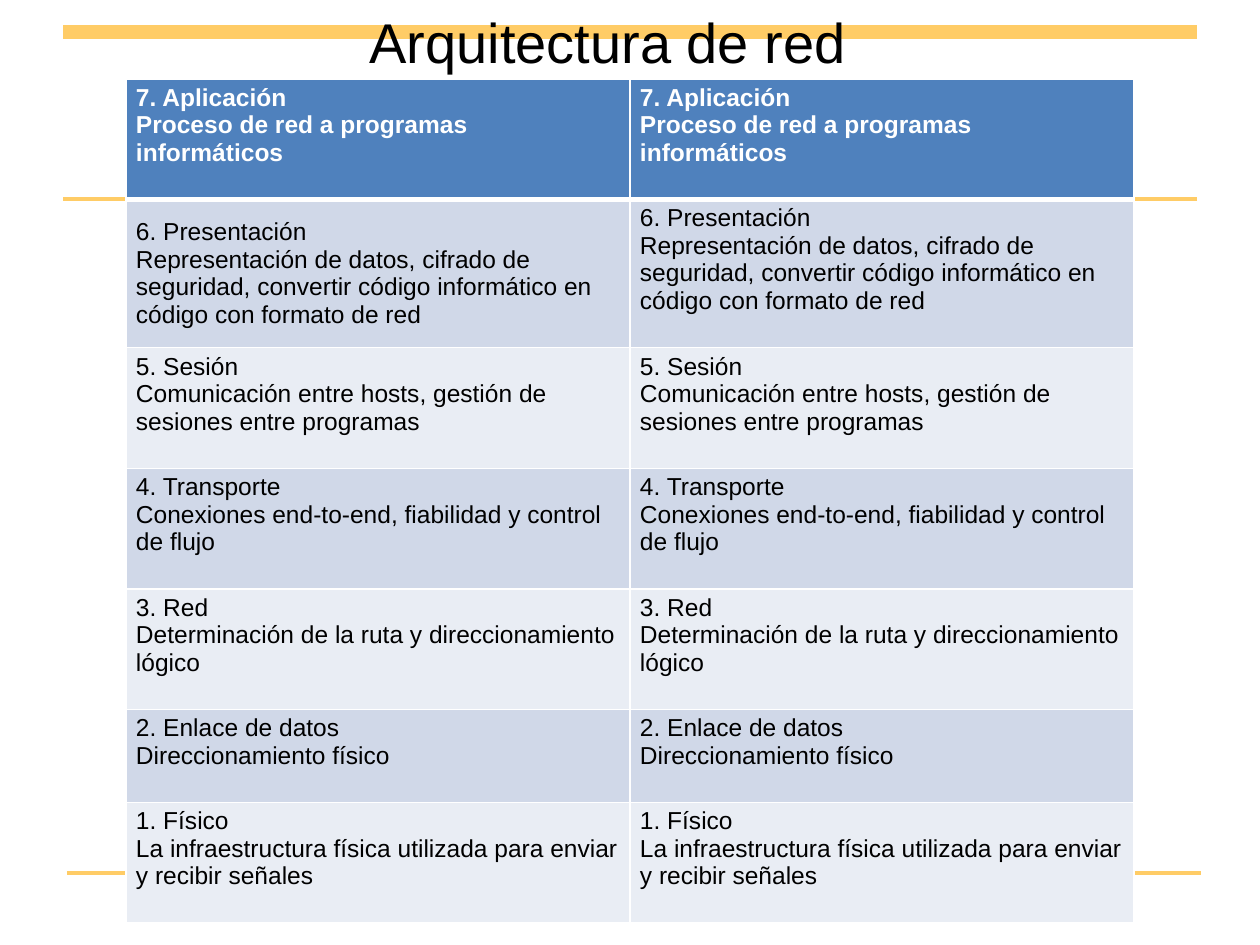
from lxml import etree
from pptx import Presentation
from pptx.dml.color import RGBColor
from pptx.enum.shapes import MSO_CONNECTOR
from pptx.enum.text import MSO_ANCHOR, MSO_AUTO_SIZE
from pptx.oxml.ns import qn
from pptx.util import Pt

STRAIGHT = MSO_CONNECTOR.STRAIGHT
MIDDLE = MSO_ANCHOR.MIDDLE
FIT_SHAPE = MSO_AUTO_SIZE.SHAPE_TO_FIT_TEXT

PX = 914400 / 126
COLORS = {"rule": "FFCC66", "header": "4F81BD", "band_dark": "D0D8E8",
          "band_light": "E9EDF4", "white": "FFFFFF", "black": "000000"}

# Rules: left, top, width in px and weight in pt
RULES = [(63, 32, 1134, 8), (67, 873, 1134, 2), (63, 199, 1134, 2)]

# Layers: heading, description, row height in px
LAYERS = [
    ("7. Aplicación", "Proceso de red a programas informáticos", 120),
    ("6. Presentación", "Representación de datos, cifrado de seguridad, convertir "
     "código informático en código con formato de red", 147),
    ("5. Sesión", "Comunicación entre hosts, gestión de sesiones entre programas", 120),
    ("4. Transporte", "Conexiones end-to-end, fiabilidad y control de flujo", 120),
    ("3. Red", "Determinación de la ruta y direccionamiento lógico", 120),
    ("2. Enlace de datos", "Direccionamiento físico", 92),
    ("1. Físico", "La infraestructura física utilizada para enviar y recibir señales", 120),
]


def px(n):
    return round(n * PX)


def rgb(name):
    return RGBColor.from_string(COLORS[name])


def style_font(r, size, color, bold=False):
    formats = {"name": "Arial", "size": Pt(size), "bold": bold}
    for key, value in formats.items():
        setattr(r.font, key, value)
    r.font.color.rgb = rgb(color)


def add_rule(s, left, top, width, weight):
    line = s.shapes.add_connector(STRAIGHT, px(left), px(top), px(left + width), px(top))
    line.line.color.rgb = rgb("rule")
    line.line.width = Pt(weight)
    etree.SubElement(line._element.spPr, qn("a:effectLst"))


def set_borders(cell, widths):
    tcPr = cell._tc.get_or_add_tcPr()
    for i, (side, width) in enumerate(widths.items()):
        ln = etree.Element(qn(f"a:ln{side}"), w=str(Pt(width)))
        fill = etree.SubElement(ln, qn("a:solidFill"))
        etree.SubElement(fill, qn("a:srgbClr"), val=COLORS["white"])
        tcPr.insert(i, ln)


def fill_cell(cell, row, col, heading, description):
    header = row == 0
    band = "header" if header else "band_dark" if row % 2 else "band_light"
    cell.fill.solid()
    cell.fill.fore_color.rgb = rgb(band)
    # One free line below the text, except in the left Presentación cell
    free_line = 0 if (row, col) == (1, 0) else 28
    formats = {"vertical_anchor": MIDDLE, "margin_left": px(10), "margin_right": px(10),
               "margin_top": px(5), "margin_bottom": px(5 + free_line)}
    for key, value in formats.items():
        setattr(cell, key, value)
    set_borders(cell, {"L": 1, "R": 1, "T": 3 if row == 1 else 1, "B": 3 if header else 1})

    p = cell.text_frame.paragraphs[0]
    p.text = f"{heading}\n{description}"
    for r in p.runs:
        style_font(r, 14, "white" if header else "black", header)
    for br in p._p.findall(qn("a:br")):
        etree.SubElement(br, qn("a:rPr"), sz="1400")


def add_layer_table(s, left, top, width, columns=2):
    height = sum(layer[2] for layer in LAYERS)
    table = s.shapes.add_table(len(LAYERS), columns, px(left), px(top),
                               px(width), px(height)).table
    for column in table.columns:
        column.width = px(width / columns)
    for row, (heading, description, row_height) in enumerate(LAYERS):
        table.rows[row].height = px(row_height)
        for col in range(columns):
            fill_cell(table.cell(row, col), row, col, heading, description)


def add_title(s, left, top, width, height):
    tf = s.shapes.add_textbox(px(left), px(top), px(width), px(height)).text_frame
    tf.word_wrap = True
    tf.auto_size = FIT_SHAPE
    r = tf.paragraphs[0].add_run()
    r.text = "Arquitectura de red"
    style_font(r, 32, "black")


def main():
    prs = Presentation()
    prs.slide_width, prs.slide_height = px(1260), px(945)
    s = prs.slides.add_slide(prs.slide_layouts[6])

    # Background rules
    for rule in RULES:
        add_rule(s, *rule)
    # Layer table and title
    add_layer_table(s, 126, 79, 1008)
    add_title(s, 357, 1, 546, 81)

    prs.save("out.pptx")


if __name__ == "__main__":
    main()
